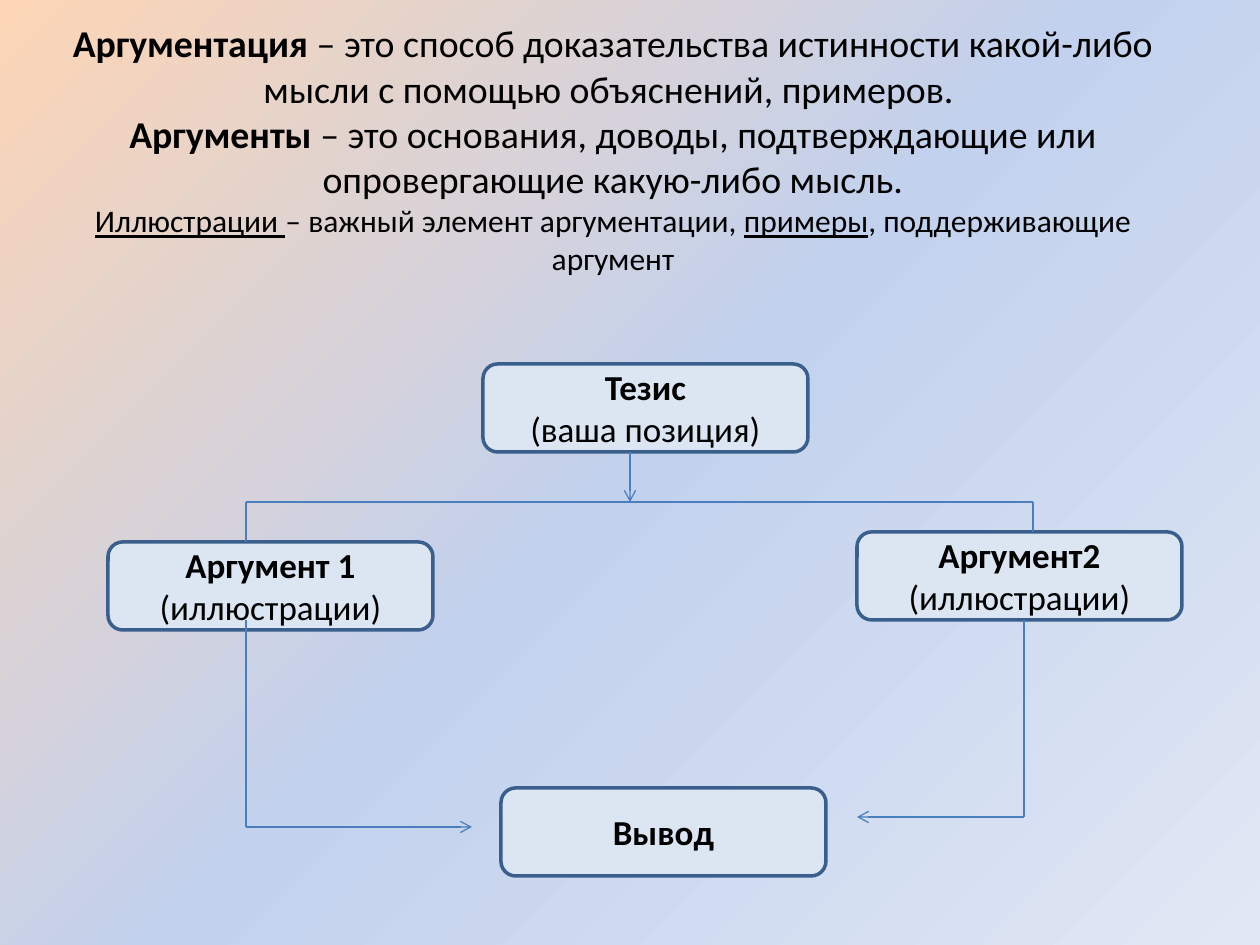
from lxml.etree import SubElement
from pptx import Presentation
from pptx.dml.color import RGBColor
from pptx.enum.shapes import MSO_CONNECTOR as Connector, MSO_SHAPE as Shape
from pptx.enum.text import MSO_ANCHOR as Anchor, PP_ALIGN as Align
from pptx.oxml.ns import qn
from pptx.util import Emu, Pt

EMU_PER_PX = 914400 // 126
FONT = "Calibri"
COLORS = {
    "text": "000000",
    "box": "DCE6F2",
    "border": "3A5F8C",
    "line": "4B7EBC",
    "peach": "FCD5B5",
    "blue": "C2D1ED",
    "pale": "E1E8F5",
}
BOX_WIDTH, BOX_HEIGHT = 325, 88
LEFT, RIGHT, RIGHT_LOWER = 246, 1033, 1024
FORK, LEFT_END, RIGHT_END = 502, 827, 817

DEFINITIONS = [
    (21.6, [("Аргументация ", "bold"),
            ("– это способ доказательства истинности какой-либо мысли "
             "с помощью объяснений, примеров. ", "")]),
    (21.6, [("Аргументы ", "bold"),
            ("– это основания, доводы, подтверждающие или опровергающие "
             "какую-либо мысль.", "")]),
    (18, [("Иллюстрации ", "underline"),
          ("– важный элемент аргументации, ", ""),
          ("примеры", "underline"),
          (", поддерживающие аргумент", "")]),
]
BOXES = [
    (483, 364, "Тезис", "(ваша позиция)"),
    (501, 788, "Вывод", ""),
    (857, 532, "Аргумент2", "(иллюстрации)"),
    (108, 542, "Аргумент 1", "(иллюстрации)"),
]
LINES = [
    ((LEFT, FORK), (RIGHT, FORK), False),
    ((LEFT, 620), (LEFT, LEFT_END), False),
    ((RIGHT_LOWER, 620), (RIGHT_LOWER, RIGHT_END), False),
    ((630, 452), (630, FORK), True),
    ((RIGHT_LOWER, RIGHT_END), (857, RIGHT_END), True),
    ((LEFT, LEFT_END), (472, LEFT_END), True),
    ((LEFT, FORK), (LEFT, 542), False),
    ((RIGHT, FORK), (RIGHT, 532), False),
]


def px(length):
    """Turn pixels into EMU."""
    return Emu(length * EMU_PER_PX)


def color(name):
    """Look up a named colour."""
    return RGBColor.from_string(COLORS[name])


def set_background(slide):
    """Fill the slide with a diagonal three-colour gradient."""
    slide.background.fill.gradient()
    gradient = slide.element.find(".//" + qn("a:gradFill"))
    stops = gradient.find(qn("a:gsLst"))
    for stop in list(stops):
        stops.remove(stop)
    for percent, name in ((0, "peach"), (50, "blue"), (100, "pale")):
        stop = SubElement(stops, qn("a:gs"), pos=str(percent * 1000))
        SubElement(stop, qn("a:srgbClr"), val=COLORS[name])
    direction = gradient.find(qn("a:lin"))
    direction.set("ang", str(45 * 60000))
    direction.set("scaled", "0")


def add_run(paragraph, text, size, style):
    """Add a run that is plain, bold or underlined."""
    run = paragraph.add_run()
    run.text = text
    run.font.name = FONT
    run.font.size = Pt(size)
    run.font.bold = style == "bold"
    run.font.underline = style == "underline"
    run.font.color.rgb = color("text")


def fill_text(frame, paragraphs):
    """Write centred paragraphs of styled runs into a text frame."""
    frame.word_wrap = True
    for index, (size, runs) in enumerate(paragraphs):
        paragraph = frame.add_paragraph() if index else frame.paragraphs[0]
        paragraph.alignment = Align.CENTER
        for text, style in runs:
            add_run(paragraph, text, size, style)


def add_definitions(slide):
    """Add the definitions at the top of the slide."""
    frame = slide.shapes.add_textbox(px(29), px(20), px(1168), px(295)).text_frame
    frame.vertical_anchor = Anchor.TOP
    frame.margin_top = 0
    fill_text(frame, DEFINITIONS)


def add_box(slide, left, top, heading, note):
    """Add a rounded box with a bold heading and an optional note."""
    shape = slide.shapes.add_shape(
        Shape.ROUNDED_RECTANGLE, px(left), px(top), px(BOX_WIDTH), px(BOX_HEIGHT))
    shape.shadow.inherit = False
    shape.fill.solid()
    shape.fill.fore_color.rgb = color("box")
    shape.line.color.rgb = color("border")
    shape.line.width = Pt(2)
    shape.text_frame.vertical_anchor = Anchor.MIDDLE
    paragraphs = [(20, [(heading, "bold")])]
    if note:
        paragraphs.append((20, [(note, "")]))
    fill_text(shape.text_frame, paragraphs)


def add_line(slide, start, end, arrow):
    """Add a thin line, with an arrowhead at its end if asked."""
    line = slide.shapes.add_connector(
        Connector.STRAIGHT, *map(px, start), *map(px, end))
    line.line.color.rgb = color("line")
    line.line.width = Pt(0.75)
    properties = line.element.spPr
    if arrow:
        SubElement(properties.find(qn("a:ln")), qn("a:tailEnd"), type="arrow")
    SubElement(properties, qn("a:effectLst"))


def main():
    """Build the slide and save it."""
    presentation = Presentation()
    presentation.slide_width, presentation.slide_height = px(1260), px(945)
    slide = presentation.slides.add_slide(presentation.slide_layouts[6])
    set_background(slide)
    add_definitions(slide)
    for box in BOXES:
        add_box(slide, *box)
    for line in LINES:
        add_line(slide, *line)
    presentation.save("out.pptx")


if __name__ == "__main__":
    main()
